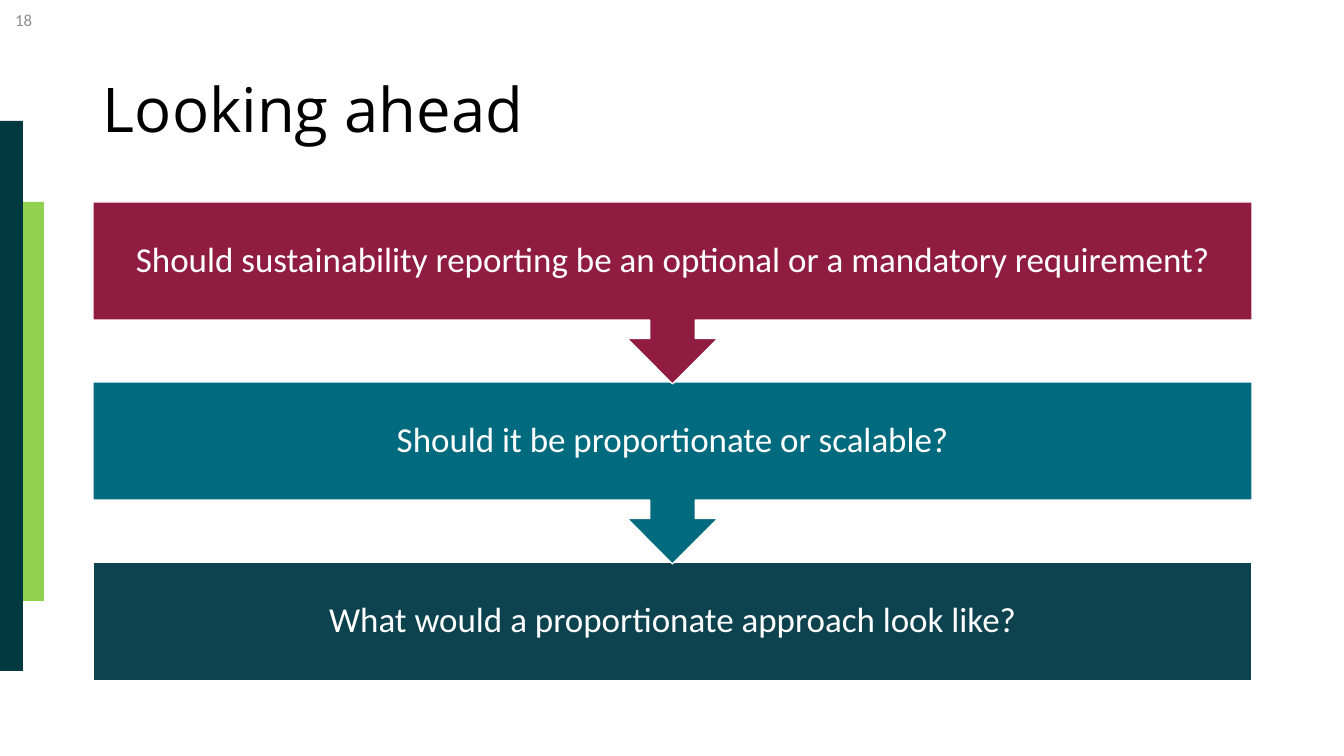
from pptx import Presentation
from pptx import util as u
from pptx.dml.color import RGBColor
from pptx.enum import shapes, text


def color(value):
    return RGBColor.from_string(value)


def px(n):
    return u.Emu(round(n * 914400 / 100.8))


class Deck:
    body_font = "Calibri"
    title_font = "Open Sans"
    white = "FFFFFF"

    def __init__(self, width, height):
        self.prs = Presentation()
        self.prs.slide_width = px(width)
        self.prs.slide_height = px(height)
        self.s = self.prs.slides.add_slide(self.prs.slide_layouts[6])

    def shape(self, kind, box, fill, line=None):
        sp = self.s.shapes.add_shape(kind, *map(px, box))
        sp.shadow.inherit = False
        sp.fill.solid()
        sp.fill.fore_color.rgb = color(fill)
        if line:
            sp.line.color.rgb = color(line)
            sp.line.width = u.Pt(1)
        else:
            sp.line.fill.background()
        return sp

    def set_text(self, sp, words, size, font, ink, align, spacing=1.0, inset=None):
        tf = sp.text_frame
        tf.text = words
        tf.word_wrap = True
        tf.vertical_anchor = text.MSO_ANCHOR.MIDDLE
        if inset is not None:
            tf.margin_left = tf.margin_right = px(inset)
            tf.margin_top = tf.margin_bottom = px(inset)
        p = tf.paragraphs[0]
        p.alignment = align
        p.line_spacing = spacing
        r = p.runs[0]
        r.font.size = u.Pt(size)
        r.font.name = font
        r.font.color.rgb = color(ink)

    def label(self, box, words, size, font, ink, align, spacing=1.0):
        sp = self.s.shapes.add_textbox(*map(px, box))
        self.set_text(sp, words, size, font, ink, align, spacing)

    def bar(self, box, fill):
        self.shape(shapes.MSO_SHAPE.RECTANGLE, box, fill)

    def step(self, kind, box, fill, words):
        sp = self.shape(kind, box, fill, self.white)
        self.set_text(sp, words, 25, self.body_font, self.white,
                      text.PP_ALIGN.CENTER, 0.9, 19)


def main():
    deck = Deck(1344, 756)
    deck.bar((0, 121, 23, 550), "003A40")
    deck.bar((23, 202, 21, 399), "92D050")
    deck.label((93, 40, 1159, 146), "Looking ahead", 44, deck.title_font,
               "000000", text.PP_ALIGN.LEFT, 0.9)

    questions = [
        ("Should sustainability reporting be an optional or a mandatory requirement?", "901D41"),
        ("Should it be proportionate or scalable?", "006A7E"),
        ("What would a proportionate approach look like?", "0D424F"),
    ]
    left, top, width, pitch = 93, 202, 1159, 180
    last = len(questions) - 1
    for i, (question, fill) in reversed(list(enumerate(questions))):
        if i == last:
            kind, height = shapes.MSO_SHAPE.RECTANGLE, 119
        else:
            kind, height = shapes.MSO_SHAPE.DOWN_ARROW_CALLOUT, 182
        deck.step(kind, (left, top + i * pitch, width, height), fill, question)

    deck.label((0, 0, 42, 40), "18", 12, deck.body_font, "8C8C8C",
               text.PP_ALIGN.RIGHT)
    deck.prs.save("out.pptx")


if __name__ == "__main__":
    main()
